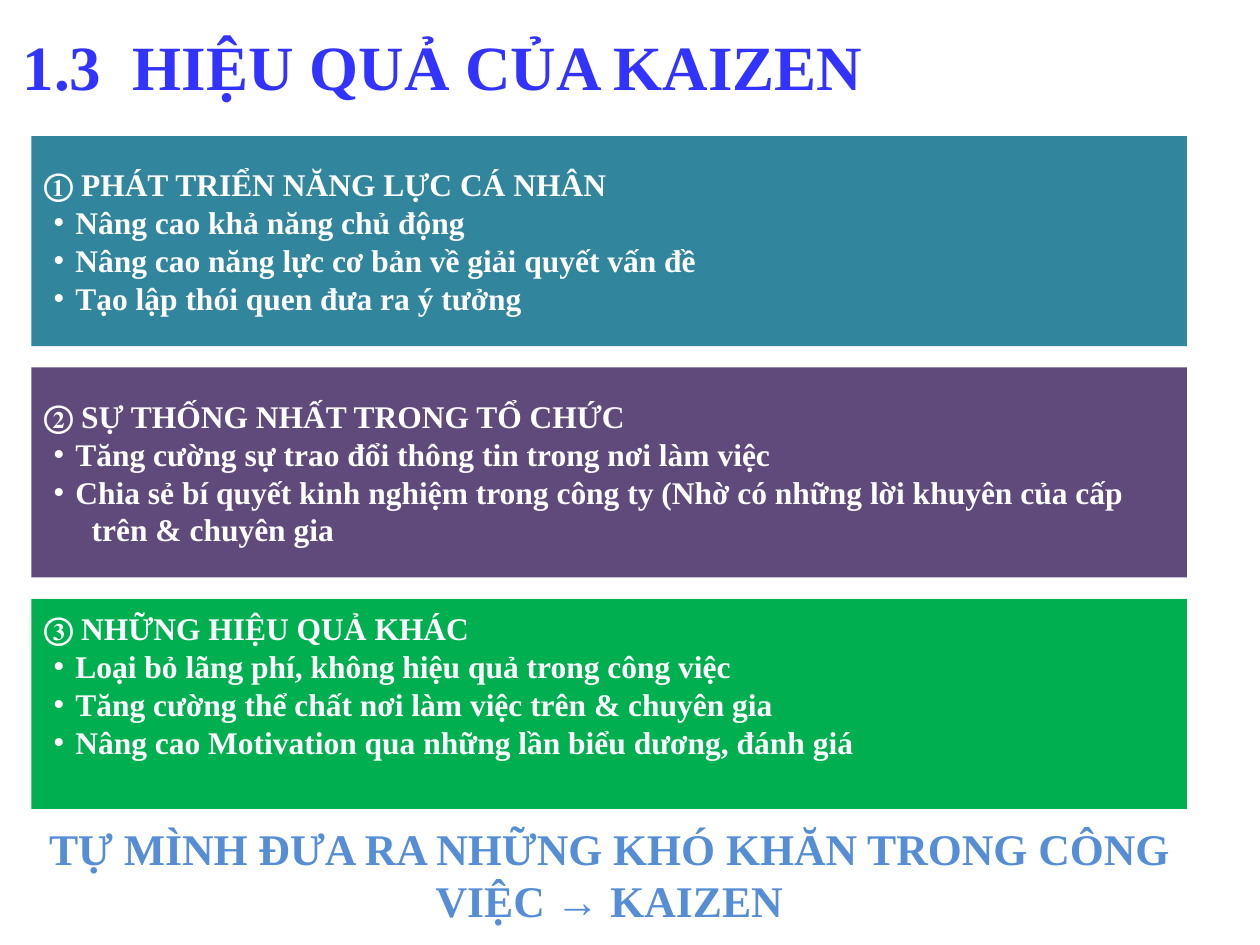
from dataclasses import dataclass

from lxml import etree
from pptx import Presentation
from pptx.dml.color import RGBColor
from pptx.enum import shapes, text
from pptx.oxml import ns
from pptx.util import Inches, Pt


@dataclass(frozen=True)
class Theme:
    font: str = "Times New Roman"
    title: str = "3333FF"
    body: str = "FFFFFF"
    closing: str = "558ED5"
    closing_outline: str = "054697"
    title_size: int = 36
    body_size: int = 18
    closing_size: int = 25


THEME = Theme()
HANGING = Inches(0.38)
BLANK_LINE = Inches(0.3)

TITLE = "1.3  HIỆU QUẢ CỦA KAIZEN"
CLOSING = "TỰ MÌNH ĐƯA RA NHỮNG KHÓ KHĂN TRONG CÔNG VIỆC → KAIZEN"
# fill, heading, points, extra space kept free below the text
PANELS = [
    ("31859C", "① PHÁT TRIỂN NĂNG LỰC CÁ NHÂN",
     ["Nâng cao khả năng chủ động",
      "Nâng cao năng lực cơ bản về giải quyết vấn đề",
      "Tạo lập thói quen đưa ra ý tưởng"], 0),
    ("604A7B", "② SỰ THỐNG NHẤT TRONG TỔ CHỨC",
     ["Tăng cường sự trao đổi thông tin trong nơi làm việc",
      "Chia sẻ bí quyết kinh nghiệm trong công ty "
      "(Nhờ có những lời khuyên của cấp trên & chuyên gia"], 0),
    ("00B050", "③ NHỮNG HIỆU QUẢ KHÁC",
     ["Loại bỏ lãng phí, không hiệu quả trong công việc",
      "Tăng cường thể chất nơi làm việc trên & chuyên gia",
      "Nâng cao Motivation qua những lần biểu dương, đánh giá"], BLANK_LINE),
]


def style(p, size, color, align=text.PP_ALIGN.LEFT):
    p.alignment = align
    for r in p.runs:
        r.font.name = THEME.font
        r.font.size = Pt(size)
        r.font.bold = True
        r.font.color.rgb = RGBColor.from_string(color)


def outline(r, color, width):
    ln = etree.Element(ns.qn("a:ln"), w=str(Pt(width)))
    fill = etree.SubElement(ln, ns.qn("a:solidFill"))
    etree.SubElement(fill, ns.qn("a:srgbClr"), val=color)
    r.font._element.insert(0, ln)


def add_title(slide, left, top, width, height):
    sp = slide.shapes.title
    sp.left, sp.top, sp.width, sp.height = left, top, width, height
    tf = sp.text_frame
    tf.text = TITLE
    tf.vertical_anchor = text.MSO_ANCHOR.TOP
    tf.auto_size = text.MSO_AUTO_SIZE.SHAPE_TO_FIT_TEXT
    style(tf.paragraphs[0], THEME.title_size, THEME.title)


def add_panel(slide, box, fill, heading, points, space_below):
    sp = slide.shapes.add_shape(shapes.MSO_SHAPE.RECTANGLE, *box)
    sp.shadow.inherit = False
    sp.fill.solid()
    sp.fill.fore_color.rgb = RGBColor.from_string(fill)
    sp.line.fill.background()
    tf = sp.text_frame
    tf.word_wrap = True
    tf.vertical_anchor = text.MSO_ANCHOR.MIDDLE
    tf.margin_bottom += space_below
    tf.text = "\n".join([heading] + ["・" + point for point in points])
    for p in tf.paragraphs:
        style(p, THEME.body_size, THEME.body)
        pPr = p._p.get_or_add_pPr()
        pPr.set("marL", str(HANGING))
        pPr.set("indent", str(-HANGING))


def add_panels(slide, left, top, width, height, gap):
    panel_height = (height - gap * (len(PANELS) - 1)) // len(PANELS)
    for i, panel in enumerate(PANELS):
        box = left, top + i * (panel_height + gap), width, panel_height
        add_panel(slide, box, *panel)


def add_closing(slide, left, top, width, height):
    tf = slide.shapes.add_textbox(left, top, width, height).text_frame
    tf.word_wrap = True
    tf.auto_size = text.MSO_AUTO_SIZE.SHAPE_TO_FIT_TEXT
    tf.text = CLOSING
    p = tf.paragraphs[0]
    style(p, THEME.closing_size, THEME.closing, text.PP_ALIGN.CENTER)
    outline(p.runs[0], THEME.closing_outline, 1)


def main():
    prs = Presentation()
    prs.slide_width, prs.slide_height = Inches(10), Inches(7.5)
    slide = prs.slides.add_slide(prs.slide_layouts.get_by_name("Title Only"))
    add_title(slide, Inches(0.08), Inches(0.17), Inches(7), Inches(0.71))
    add_panels(slide, Inches(0.25), Inches(1.08), Inches(9.17), Inches(5.34),
               gap=Inches(0.17))
    add_closing(slide, Inches(0.17), Inches(6.47), Inches(9.33), Inches(0.94))
    prs.save("out.pptx")


if __name__ == "__main__":
    main()
